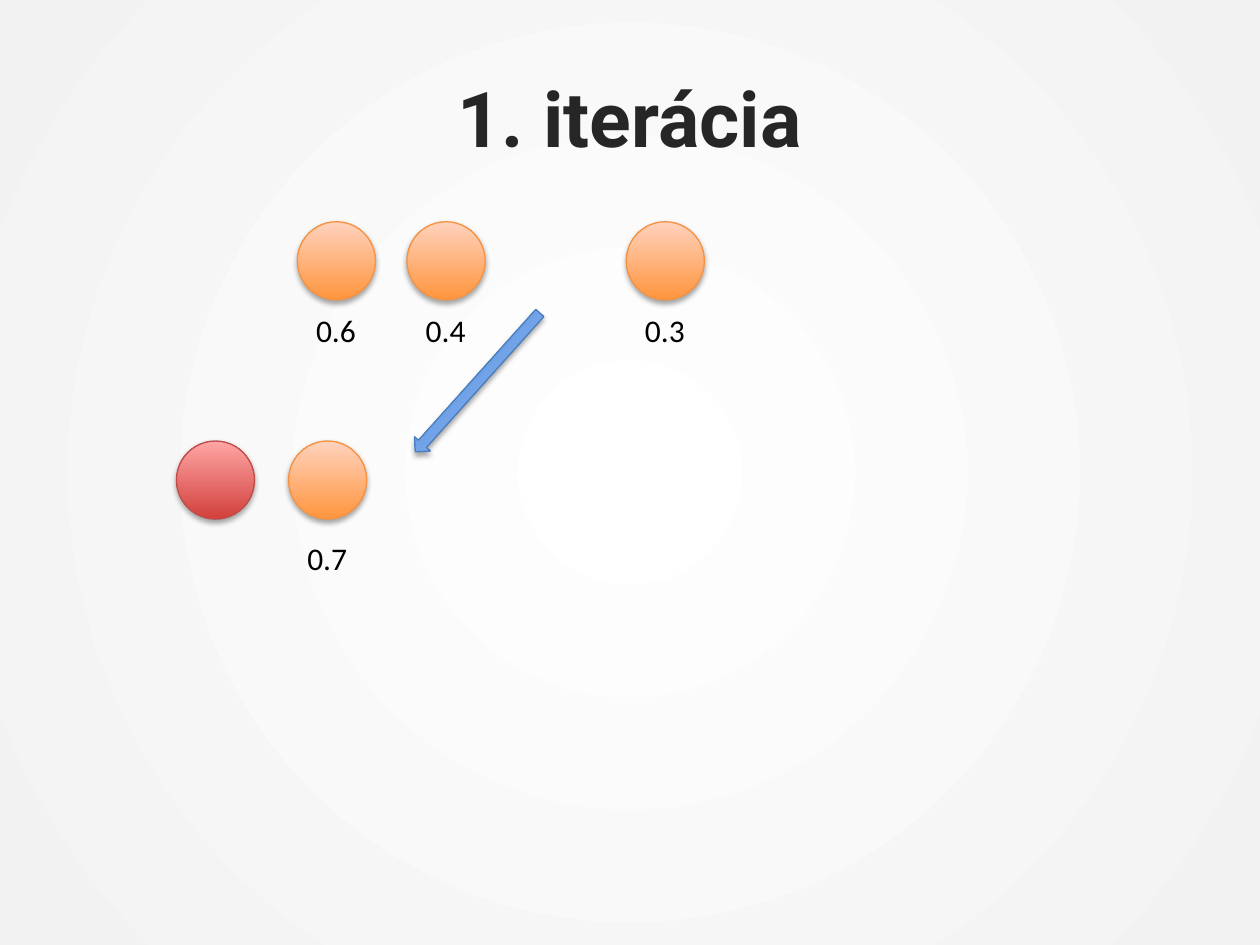
from lxml import etree
from pptx import Presentation
from pptx.dml.color import RGBColor
from pptx.enum.shapes import MSO_SHAPE
from pptx.enum.text import MSO_ANCHOR, MSO_AUTO_SIZE, PP_ALIGN
from pptx.oxml import parse_xml
from pptx.oxml.ns import qn
from pptx.util import Inches, Pt

OVAL = MSO_SHAPE.OVAL
ARROW = MSO_SHAPE.RIGHT_ARROW
MIDDLE = MSO_ANCHOR.MIDDLE
GROW = MSO_AUTO_SIZE.SHAPE_TO_FIT_TEXT
CENTER = PP_ALIGN.CENTER

WHITE = RGBColor(0xFF, 0xFF, 0xFF)
PALE = RGBColor(0xF2, 0xF2, 0xF2)
DARK = RGBColor(0x26, 0x26, 0x26)
BLACK = RGBColor(0, 0, 0)
RED = (RGBColor(0xD1, 0x40, 0x3C), RGBColor(0xFF, 0xA6, 0xA5), RGBColor(0xBF, 0x4C, 0x48))
ORANGE = (RGBColor(0xFF, 0x95, 0x3E), RGBColor(0xFF, 0xD2, 0xBD), RGBColor(0xF6, 0x92, 0x40))
BLUE = (RGBColor(0x3F, 0x80, 0xCE), RGBColor(0xA4, 0xC4, 0xFF), RGBColor(0x4B, 0x7E, 0xBC))

SIZE = 0.62
SPACE = "http://schemas.openxmlformats.org/drawingml/2006/main"
SHADOW = (
    f'<a:effectLst xmlns:a="{SPACE}">'
    '<a:outerShdw blurRad="40000" dist="23000" dir="5400000" rotWithShape="0">'
    '<a:srgbClr val="000000"><a:alpha val="35000"/></a:srgbClr>'
    '</a:outerShdw></a:effectLst>'
)


def blend(fill, first, last):
    fill.gradient()
    for stop, color in zip(fill.gradient_stops, (first, last)):
        stop.color.rgb = color


def add_back(slide):
    blend(slide.background.fill, WHITE, PALE)
    grad = next(slide.background._cSld.iter(qn("a:gradFill")))
    grad.remove(grad.find(qn("a:lin")))
    way = etree.Element(qn("a:path"), path="circle")
    etree.SubElement(way, qn("a:fillToRect"), l="50000", t="50000", r="50000", b="50000")
    grad.find(qn("a:gsLst")).addnext(way)


def add_text(slide, box, text, font, size, color):
    shape = slide.shapes.add_textbox(*map(Inches, box))
    frame = shape.text_frame
    frame.text = text
    run = frame.paragraphs[0].runs[0]
    run.font.name = font
    run.font.size = Pt(size)
    run.font.color.rgb = color
    return frame


def add_title(slide, box, text):
    frame = add_text(slide, box, text, "Roboto", 44, DARK)
    frame.word_wrap = True
    frame.vertical_anchor = MIDDLE
    frame.paragraphs[0].alignment = CENTER
    frame.paragraphs[0].runs[0].font.bold = True


def add_solid(slide, kind, box, colors):
    low, high, edge = colors
    shape = slide.shapes.add_shape(kind, *map(Inches, box))
    blend(shape.fill, low, high)
    shape.fill.gradient_angle = 90
    shape.line.color.rgb = edge
    shape.line.width = Pt(0.75)
    shape._element.spPr.append(parse_xml(SHADOW))
    return shape


def add_ball(slide, left, top, colors, label=None, drop=0.66):
    add_solid(slide, OVAL, (left, top, SIZE, SIZE), colors)
    if label:
        box = (left + 0.05, top + drop, 0.52, 0.4)
        frame = add_text(slide, box, label, "Calibri", 18, BLACK)
        frame.word_wrap = False
        frame.auto_size = GROW


def add_rows(slide, left, top):
    for step, label in ((0, "0.6"), (1, "0.4"), (3, "0.3")):
        add_ball(slide, left + 0.96 + step * 0.87, top, ORANGE, label)
    add_ball(slide, left, top + 1.74, RED)
    add_ball(slide, left + 0.89, top + 1.74, ORANGE, "0.7", 0.73)
    arrow = add_solid(slide, ARROW, (left + 1.65, top + 1.19, 1.48, 0.17), BLUE)
    arrow.rotation = 131.9


def main():
    deck = Presentation()
    deck.slide_width = Inches(10)
    deck.slide_height = Inches(7.5)
    slide = deck.slides.add_slide(deck.slide_layouts[6])
    add_back(slide)
    add_title(slide, (0.5, 0.3, 9, 1.25), "1. iterácia")
    add_rows(slide, 1.4, 1.76)
    deck.save("out.pptx")


if __name__ == "__main__":
    main()
